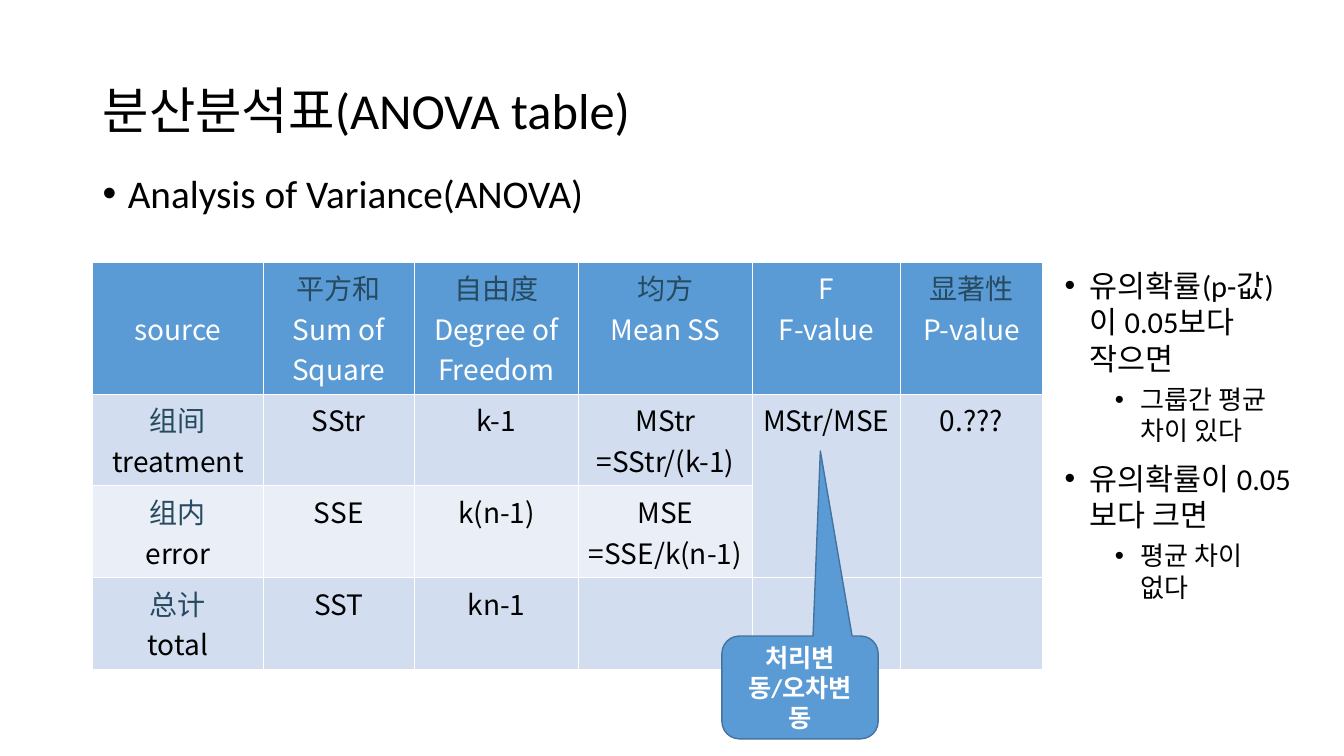
import pptx
import pptx.util
import pptx.dml.color
import pptx.enum.shapes
import pptx.enum.text
import pptx.oxml
import pptx.oxml.ns
from pptx.util import Inches

COLORS = {
    "black": "000000", "white": "FFFFFF", "blue": "5B9BD5", "edge": "43739E",
    "chinese": "264A60", "band": "D2DEEF", "light": "EAEFF7",
}
LEFT = pptx.enum.text.PP_ALIGN.LEFT
CENTER = pptx.enum.text.PP_ALIGN.CENTER
MIDDLE = pptx.enum.text.MSO_ANCHOR.MIDDLE
qn = pptx.oxml.ns.qn

# Row heights hold three header lines and two body lines
COLUMNS = [1.69, 1.5, 1.63, 1.72, 1.47, 1.41]
ROWS = [1.31, 0.91, 0.91, 0.91]
ROW_FILLS = ["blue", "band", "light", "band"]
# Each line of a cell is its own paragraph
ANOVA = [
    ["source", "平方和\nSum of Square", "自由度\nDegree of Freedom",
     "均方\nMean SS", "F\nF-value", "显著性\nP-value"],
    ["组间\ntreatment", "SStr", "k-1", "MStr\n=SStr/(k-1)", "MStr/MSE", "0.???"],
    ["组内\nerror", "SSE", "k(n-1)", "MSE\n=SSE/k(n-1)", "", ""],
    ["总计\ntotal", "SST", "kn-1", "", "", ""],
]
# Level and text
NOTES = [
    (0, "유의확률(p-값)이 0.05보다 작으면"),
    (1, "그룹간 평균 차이 있다"),
    (0, "유의확률이 0.05보다 크면"),
    (1, "평균 차이 없다"),
]


def rgb(name):
    return pptx.dml.color.RGBColor.from_string(COLORS[name])


def box(x, y, w, h):
    return [Inches(v) for v in (x, y, w, h)]


def write(p, text, size, color="black", font="Calibri", bold=False, **paragraph):
    """Fill one paragraph with a run; extra values format the paragraph."""
    for key, value in paragraph.items():
        setattr(p, key, value)
    r = p.add_run()
    r.text = text
    values = {"size": pptx.util.Pt(size), "name": font, "bold": bold}
    for key, value in values.items():
        setattr(r.font, key, value)
    r.font.color.rgb = rgb(color)
    ea = pptx.oxml.parse_xml(f'<a:ea {pptx.oxml.ns.nsdecls("a")} typeface="{font}"/>')
    r.font._element.find(qn("a:latin")).addnext(ea)


def add_bullet(p, level):
    p.level = level
    pPr = p._p.get_or_add_pPr()
    pPr.set("marL", str(Inches(0.25 + 0.5 * level)))
    pPr.set("indent", str(Inches(-0.25)))
    for tag, attr, value in (("buFont", "typeface", "Arial"), ("buChar", "char", "•")):
        pPr.append(pptx.oxml.parse_xml(
            f'<a:{tag} {pptx.oxml.ns.nsdecls("a")} {attr}="{value}"/>'))


def add_bullets(s, place, items, sizes, line_spacing=1.0):
    tf = s.shapes.add_textbox(*box(*place)).text_frame
    tf.word_wrap = True
    for i, (level, text) in enumerate(items):
        p = tf.add_paragraph() if i else tf.paragraphs[0]
        write(p, text, sizes[level], line_spacing=line_spacing,
              space_before=pptx.util.Pt(5 if level else 10))
        add_bullet(p, level)


def add_title(s, text):
    title = s.shapes.title
    title.left, title.top, title.width, title.height = box(0.92, 0.4, 11.5, 1.45)
    tf = title.text_frame
    tf.vertical_anchor = MIDDLE
    tf.auto_size = pptx.enum.text.MSO_AUTO_SIZE.NONE
    write(tf.paragraphs[0], text, 36, alignment=LEFT, line_spacing=0.9)


def add_borders(cell):
    tcPr = cell._tc.get_or_add_tcPr()
    for side in "LRTB":
        tcPr.append(pptx.oxml.parse_xml(
            f'<a:ln{side} {pptx.oxml.ns.nsdecls("a")} w="12700"><a:solidFill>'
            f'<a:srgbClr val="{COLORS["white"]}"/></a:solidFill></a:ln{side}>'))


def fill_cell(cell, text, fill, color):
    add_borders(cell)
    cell.fill.solid()
    cell.fill.fore_color.rgb = rgb(fill)
    tf = cell.text_frame
    for i, line in enumerate(text.split("\n") if text else []):
        p = tf.add_paragraph() if i else tf.paragraphs[0]
        chinese = "一" <= line[0] <= "龥"
        write(p, line, 20, "chinese" if chinese else color,
              "Noto Sans CJK TC" if chinese else "Noto Sans CJK KR", alignment=CENTER)


def add_anova_table(s):
    place = box(0.92, 2.6, sum(COLUMNS), sum(ROWS))
    table = s.shapes.add_table(len(ROWS), len(COLUMNS), *place).table
    table.first_row = table.horz_banding = False
    for column, width in zip(table.columns, COLUMNS):
        column.width = Inches(width)
    for i, (row, height) in enumerate(zip(table.rows, ROWS)):
        row.height = Inches(height)
        for cell, text in zip(row.cells, ANOVA[i]):
            fill_cell(cell, text, ROW_FILLS[i], "black" if i else "white")
    table.cell(0, 0).vertical_anchor = MIDDLE
    # F and P values span treatment and error
    for col in (4, 5):
        table.cell(1, col).merge(table.cell(2, col))


def add_callout(s, text):
    kind = pptx.enum.shapes.MSO_SHAPE.ROUNDED_RECTANGULAR_CALLOUT
    sp = s.shapes.add_shape(kind, *box(7.16, 6.31, 1.55, 1.02))
    for i, value in enumerate((0.13, -2.3, 0.17)):
        sp.adjustments[i] = value
    sp.shadow.inherit = False
    sp.fill.solid()
    sp.fill.fore_color.rgb = rgb("blue")
    sp.line.color.rgb = rgb("edge")
    sp.line.width = pptx.util.Pt(1)
    tf = sp.text_frame
    tf.word_wrap = True
    tf.vertical_anchor = MIDDLE
    write(tf.paragraphs[0], text, 18, "white", bold=True, alignment=CENTER)


def main():
    prs = pptx.Presentation()
    prs.slide_width, prs.slide_height = Inches(13.33), Inches(7.5)
    s = prs.slides.add_slide(prs.slide_layouts[5])

    # Heading
    add_title(s, "분산분석표(ANOVA table)")
    add_bullets(s, (0.92, 1.68, 9, 1.06), [(0, "Analysis of Variance(ANOVA)")], [28], 0.9)

    # Table with its callout
    add_anova_table(s)
    add_callout(s, "처리변동/오차변동")

    # Reading the p-value
    add_bullets(s, (10.46, 2.6, 2.45, 3.72), NOTES, [21.7, 18.6])

    prs.save("out.pptx")


if __name__ == "__main__":
    main()
